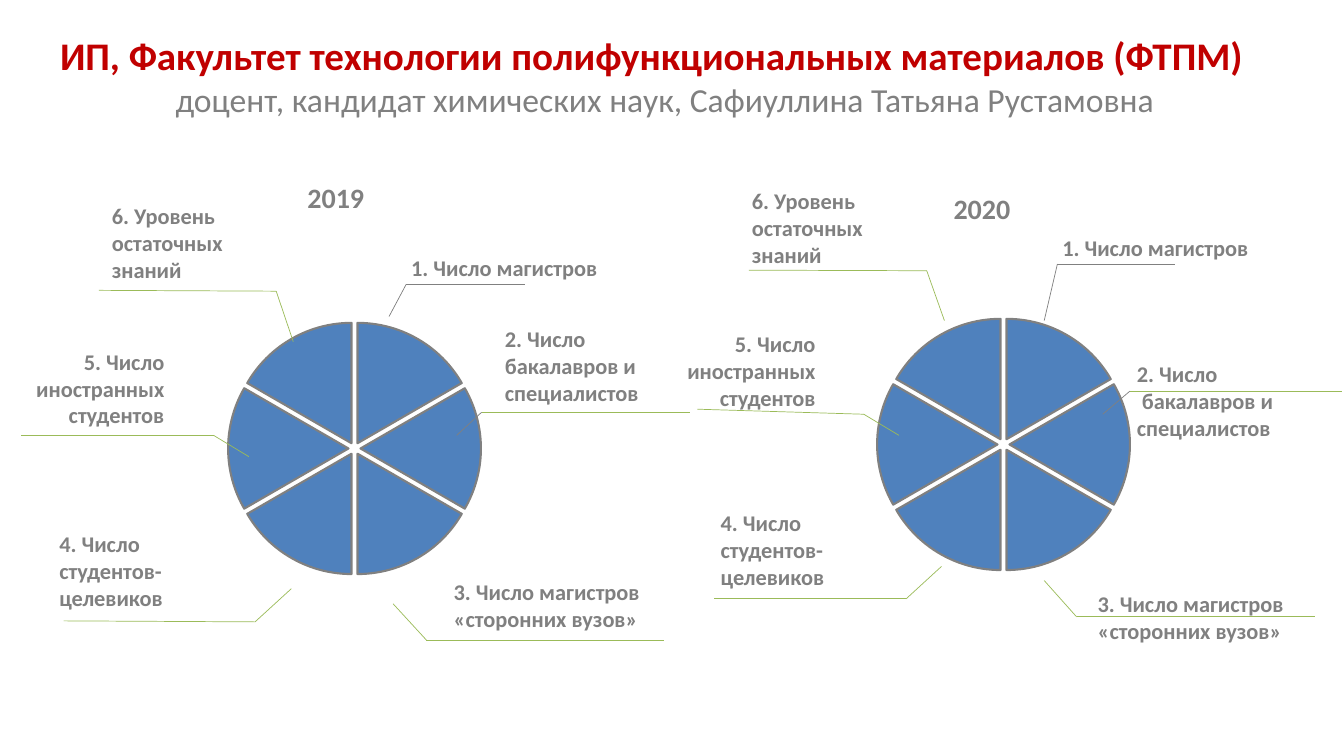
from itertools import pairwise

from lxml import etree
from pptx import Presentation
from pptx.chart.data import CategoryChartData
from pptx.dml.color import RGBColor
from pptx.enum.chart import XL_CHART_TYPE
from pptx.enum.shapes import MSO_CONNECTOR
from pptx.enum.text import MSO_ANCHOR, PP_ALIGN
from pptx.oxml import parse_xml
from pptx.oxml.ns import nsdecls, qn
from pptx.util import Pt

COLORS = {"title": "C00000", "text": "808080", "slice": "00B050", "leader": "9BBB59", "black": "000000"}
LABELS = [
    ["1. Число магистров"],
    ["2. Число", "бакалавров и специалистов"],
    ["3. Число магистров «сторонних вузов»"],
    ["4. Число студентов-целевиков"],
    ["5. Число иностранных студентов"],
    ["6. Уровень остаточных знаний"],
]
LABELS_2020 = [LABELS[0], ["2. Число", " бакалавров и специалистов"], *LABELS[2:]]
LEADER_COLORS = [("text", "text"), ("text", "leader")] + [("leader", "leader")] * 4
ALIGNS = [PP_ALIGN.LEFT] * 4 + [PP_ALIGN.RIGHT, PP_ALIGN.LEFT]
YEARS = [
    {
        "year": "2019", "year_box": (214.6, 126, 54.7, 31.7),
        "pie_box": (103, 193.7, 290.9, 272.2), "labels": LABELS,
        "callouts": [
            ((288.7, 178.6, 185.8, 24.5), [(277.9, 226.1), (290.2, 203), (375.1, 203)]),
            ((355.7, 229.7, 126.7, 33.8), [(326.2, 311), (344, 294.5), (493.2, 294.5)]),
            ((319, 410.4, 172.1, 25.2), [(280.8, 431.3), (304.6, 457.2), (474.5, 457.2)]),
            ((37.4, 375.8, 141.8, 77), [(208.1, 420.5), (182.2, 444.2), (45.4, 443.5)]),
            ((-33.8, 245.5, 156.2, 64.1), [(177.8, 326.2), (152.6, 311), (15.1, 311)]),
            ((74.9, 141.8, 133.2, 22.3), [(209.5, 244.1), (197.3, 208), (70.6, 207.4)]),
        ],
    },
    {
        "year": "2020", "year_box": (676.1, 133.9, 58.3, 31),
        "pie_box": (566.6, 191.5, 290.9, 270.7), "labels": LABELS_2020,
        "callouts": [
            ((753.8, 164.2, 185.8, 24.5), [(745.9, 229), (755.3, 188.6), (839.5, 188.6)]),
            ((807.1, 254.2, 187.9, 33.8), [(787.7, 295.9), (807.1, 279.4), (958.3, 279.4)]),
            ((779, 419, 172.1, 24.5), [(745.9, 414.7), (769, 440.6), (939.6, 440.6)]),
            ((509.8, 360.7, 141.8, 20.2), [(672.5, 404.6), (647.3, 427.7), (509.8, 427.7)]),
            ((431.3, 233.3, 156.2, 25.9), [(642.2, 311), (617, 295.9), (498.2, 292.3)]),
            ((532.1, 131, 133.2, 22.3), [(674.6, 229), (662, 193.4), (535, 193)]),
        ],
    },
]


class SlideBuilder:
    font = "Calibri"

    def __init__(self, slide):
        self.slide = slide

    def color(self, name):
        return RGBColor.from_string(COLORS[name])

    def text(self, box, lines, align=PP_ALIGN.LEFT, anchor=MSO_ANCHOR.TOP, inset=(5, 2.9)):
        sp = self.slide.shapes.add_textbox(*map(Pt, box))
        tf = sp.text_frame
        tf.word_wrap = True
        tf.vertical_anchor = anchor
        tf.margin_left = tf.margin_right = Pt(inset[0])
        tf.margin_top = tf.margin_bottom = Pt(inset[1])
        for i, (line, size, bold, color) in enumerate(lines):
            p = tf.add_paragraph() if i else tf.paragraphs[0]
            p.alignment = align
            r = p.add_run()
            r.text = line
            r.font.name = self.font
            r.font.size = Pt(size)
            r.font.bold = bold
            r.font.color.rgb = self.color(color)

    def line(self, start, end, color):
        cx = self.slide.shapes.add_connector(MSO_CONNECTOR.STRAIGHT, *map(Pt, start + end))
        cx.line.width = Pt(0.5)
        cx.line.color.rgb = self.color(color)
        etree.SubElement(cx._element.spPr, qn("a:effectLst"))

    def leader(self, points, colors):
        for (start, end), color in zip(pairwise(points), colors):
            self.line(start, end, color)

    def pie(self, box, values):
        data = CategoryChartData()
        data.categories = [str(n) for n in range(1, len(values) + 1)]
        data.add_series("Series 1", values)
        frame = self.slide.shapes.add_chart(XL_CHART_TYPE.PIE, *map(Pt, box), data)
        chart = frame.chart
        chart.has_title = False
        chart.has_legend = False
        chart.font.name = self.font
        chart.font.size = Pt(10)
        chart.font.color.rgb = self.color("black")
        plot = chart.plots[0]
        plot.vary_by_categories = False
        series = plot.series[0]
        series.format.fill.solid()
        series.format.fill.fore_color.rgb = self.color("slice")
        series.format.line.width = Pt(1.5)
        series.format.line.color.rgb = self.color("text")
        explosion = parse_xml(f'<c:explosion {nsdecls("c")} val="5"/>')
        series._element.find(qn("c:spPr")).addnext(explosion)
        self.plot_layout(chart, x=0.206, y=0, w=0.621, h=0.931)

    def plot_layout(self, chart, **sides):
        area = chart.element.find(".//" + qn("c:plotArea"))
        for old in area.findall(qn("c:layout")):
            area.remove(old)
        modes = '<c:layoutTarget val="inner"/><c:xMode val="edge"/><c:yMode val="edge"/>'
        sizes = "".join(f'<c:{side} val="{value}"/>' for side, value in sides.items())
        area.insert(0, parse_xml(
            f'<c:layout {nsdecls("c")}><c:manualLayout>{modes}{sizes}</c:manualLayout></c:layout>'))


def main():
    prs = Presentation()
    prs.slide_width, prs.slide_height = Pt(960), Pt(540)
    s = SlideBuilder(prs.slides.add_slide(prs.slide_layouts[6]))
    for item in YEARS:
        s.text(item["year_box"], [(item["year"], 20, True, "text")])
        s.pie(item["pie_box"], [17] * 6 + [None] * 6)
        for (box, points), label, colors, align in zip(
                item["callouts"], item["labels"], LEADER_COLORS, ALIGNS):
            s.leader(points, colors)
            s.text(box, [(line, 16, True, "text") for line in label], align)
    s.text((13, 22.3, 923.8, 66.2), [
        ("ИП, Факультет технологии полифункциональных материалов (ФТПМ)\t", 27.9, True, "title"),
        ("доцент, кандидат химических наук, Сафиуллина Татьяна Рустамовна", 24, False, "text"),
    ], PP_ALIGN.CENTER, MSO_ANCHOR.BOTTOM, (7.2, 3.6))
    prs.save("out.pptx")


if __name__ == "__main__":
    main()
